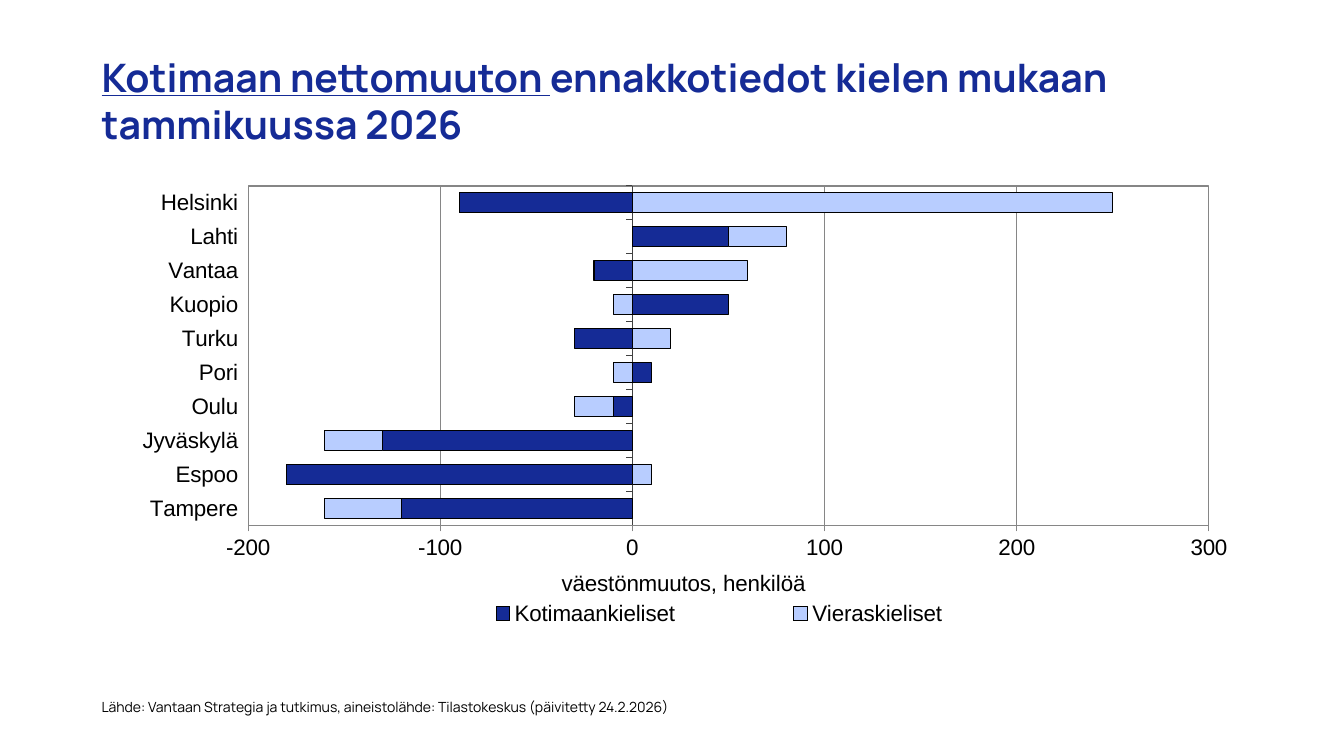
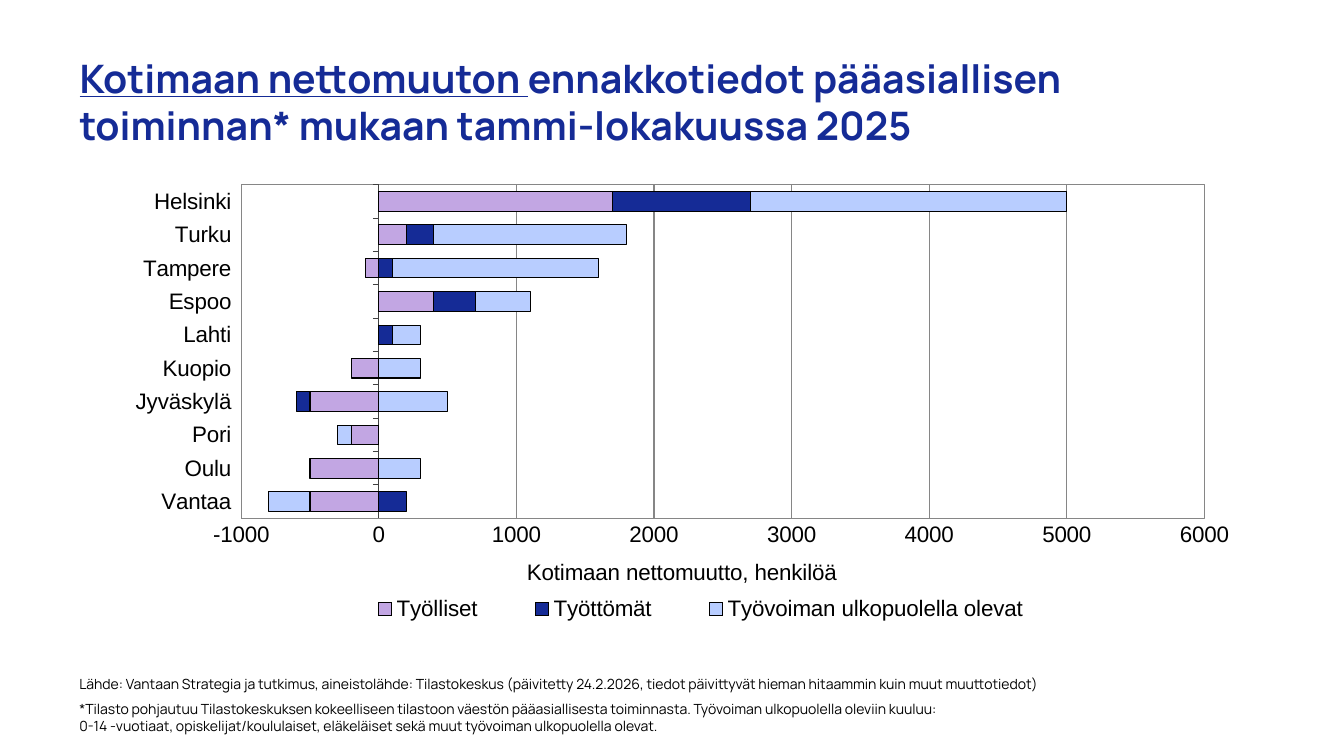
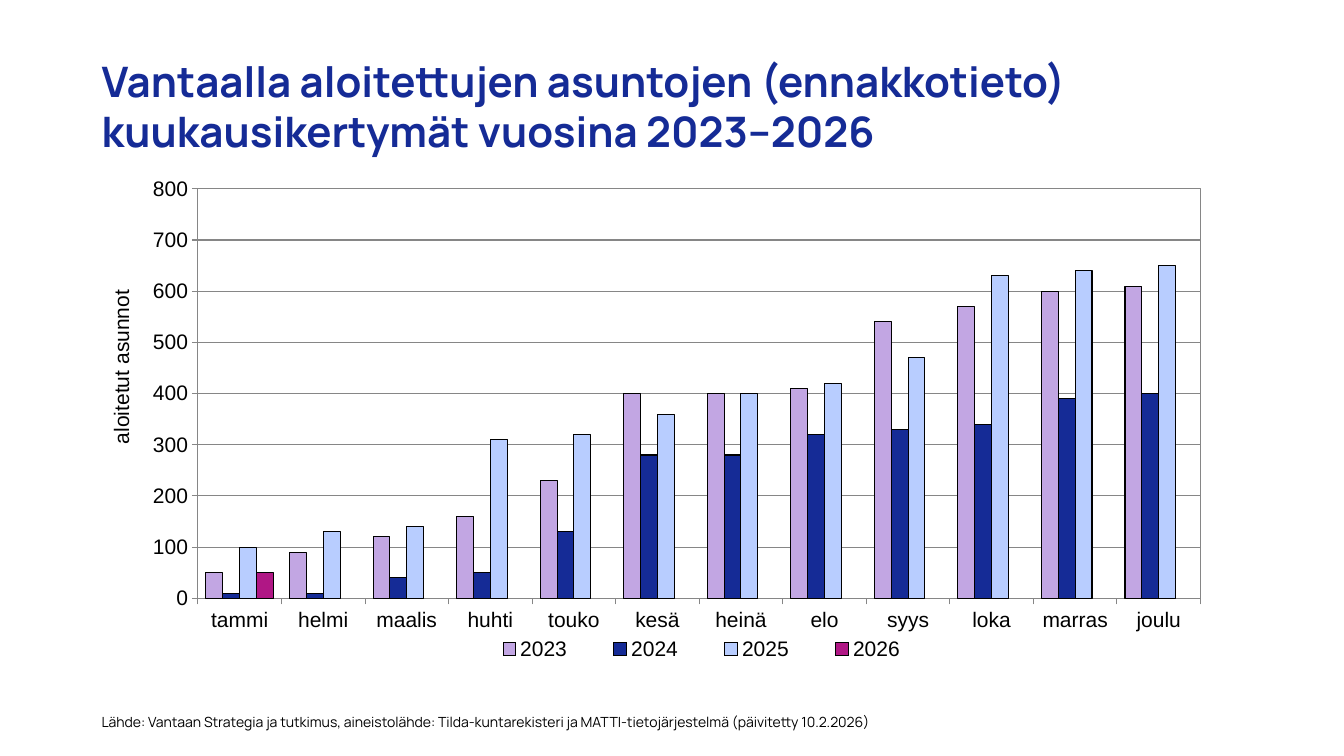
from dataclasses import dataclass
from typing import Any, Optional

from lxml.etree import SubElement
from pptx import Presentation
from pptx.chart.data import CategoryChartData
from pptx.dml.color import RGBColor
from pptx.enum.chart import XL_CHART_TYPE, XL_LEGEND_POSITION, XL_TICK_LABEL_POSITION, XL_TICK_MARK
from pptx.enum.text import MSO_ANCHOR, MSO_AUTO_SIZE, PP_ALIGN
from pptx.oxml import parse_xml
from pptx.oxml.ns import nsdecls, qn
from pptx.util import Cm, Pt

NAVY = RGBColor(0x15, 0x2B, 0x96)
SKY = RGBColor(0xB8, 0xCD, 0xFF)
LILAC = RGBColor(0xC2, 0xA6, 0xE3)
MAGENTA = RGBColor(0xB0, 0x17, 0x85)
BLACK = RGBColor(0, 0, 0)
DARK_GREY = RGBColor(0x40, 0x40, 0x40)
GRID_GREY = RGBColor(0x86, 0x86, 0x86)

HAIRLINE = Pt(0.75)
TITLE_FORMAT = {"name": "Manrope", "bold": True}
SOURCE_FORMAT = {"name": "Manrope", "size": Pt(10)}
CHART_FORMAT = {"name": "Arial", "bold": False}
SOURCE_START = "Lähde: Vantaan Strategia ja tutkimus, aineistolähde: "

Box = tuple[float, float, float, float]


@dataclass(frozen=True)
class Series:
    """One named data series and its fill."""

    name: str
    values: tuple[Optional[int], ...]
    color: RGBColor


@dataclass(frozen=True)
class ChartSpec:
    """Data, scale and layout fractions of one chart."""

    box: Box
    categories: tuple[str, ...]
    series: tuple[Series, ...]
    value_title: str
    scale: dict[str, int]
    gap: int
    plot_area: Box
    legend_area: Box
    title_at: tuple[float, float]
    stacked: bool = True
    value_tick: Any = XL_TICK_MARK.OUTSIDE
    axis_color: RGBColor = DARK_GREY
    size: int = 16


@dataclass(frozen=True)
class SlideSpec:
    """Title, source lines and chart of one slide."""

    title_box: Box
    title: str
    source_box: Box
    sources: tuple[tuple[str, int], ...]
    chart: ChartSpec
    underlined: str = ""
    title_size: int = 28


SLIDES = (
    SlideSpec(
        title_box=(2.31, 0.97, 28.5, 3.12),
        underlined="Kotimaan nettomuuton ",
        title="ennakkotiedot kielen mukaan tammikuussa 2026",
        source_box=(2.31, 17.48, 22.28, 0.76),
        sources=((SOURCE_START + "Tilastokeskus (päivitetty 24.2.2026)", 0),),
        chart=ChartSpec(
            box=(2.31, 4.34, 29.21, 11.58),
            categories=("Tampere", "Espoo", "Jyväskylä", "Oulu", "Pori",
                        "Turku", "Kuopio", "Vantaa", "Lahti", "Helsinki"),
            series=(
                Series("Kotimaankieliset", (-120, -180, -130, -10, 10, -30, 50, -20, 50, -90), NAVY),
                Series("Vieraskieliset", (-40, 10, -30, -20, -10, 20, -10, 60, 30, 250), SKY),
            ),
            value_title="väestönmuutos, henkilöä",
            scale={"minimum_scale": -200, "maximum_scale": 300, "major_unit": 100},
            gap=70,
            plot_area=(0.135, 0.03, 0.829, 0.739),
            legend_area=(0.253, 0.925, 0.577, 0.07),
            title_at=(0.402, 0.855),
        ),
    ),
    SlideSpec(
        title_box=(1.75, 0.97, 28.5, 3.18),
        underlined="Kotimaan nettomuuton ",
        title="ennakkotiedot pääasiallisen toiminnan* mukaan tammi-lokakuussa 2025",
        source_box=(1.75, 16.89, 27.41, 1.57),
        sources=(
            (SOURCE_START + "Tilastokeskus (päivitetty 24.2.2026, tiedot päivittyvät "
             "hieman hitaammin kuin muut muuttotiedot)", 0),
            ("*Tilasto pohjautuu Tilastokeskuksen kokeelliseen tilastoon väestön pääasiallisesta "
             "toiminnasta. Työvoiman ulkopuolella oleviin kuuluu:", 6),
            ("0-14 -vuotiaat, opiskelijat/koululaiset, eläkeläiset sekä muut "
             "työvoiman ulkopuolella olevat.", 0),
        ),
        chart=ChartSpec(
            box=(2.34, 4.32, 29.21, 11.58),
            categories=("Vantaa", "Oulu", "Pori", "Jyväskylä", "Kuopio",
                        "Lahti", "Espoo", "Tampere", "Turku", "Helsinki"),
            series=(
                Series("Työlliset", (-500, -500, -200, -500, -200, 0, 400, -100, 200, 1700), LILAC),
                Series("Työttömät", (200, 0, 0, -100, 0, 100, 300, 100, 200, 1000), NAVY),
                Series("Työvoiman ulkopuolella olevat",
                       (-300, 300, -100, 500, 300, 200, 400, 1500, 1400, 2300), SKY),
            ),
            value_title="Kotimaan nettomuutto, henkilöä",
            scale={"minimum_scale": -1000, "maximum_scale": 6000, "major_unit": 1000},
            gap=70,
            plot_area=(0.128, 0.029, 0.831, 0.726),
            legend_area=(0.203, 0.917, 0.643, 0.07),
            title_at=(0.371, 0.832),
            value_tick=XL_TICK_MARK.NONE,
        ),
    ),
    SlideSpec(
        title_box=(2.31, 1.02, 29.21, 3.3),
        title="Vantaalla aloitettujen asuntojen (ennakkotieto) kuukausikertymät vuosina 2023–2026",
        title_size=30,
        source_box=(2.31, 17.86, 23.27, 1.19),
        sources=((SOURCE_START + "Tilda-kuntarekisteri ja MATTI-tietojärjestelmä "
                  "(päivitetty 10.2.2026)", 0),),
        chart=ChartSpec(
            box=(2.59, 4.32, 28.55, 12.57),
            categories=("tammi", "helmi", "maalis", "huhti", "touko", "kesä",
                        "heinä", "elo", "syys", "loka", "marras", "joulu"),
            series=(
                Series("2023", (50, 90, 120, 160, 230, 400, 400, 410, 540, 570, 600, 610), LILAC),
                Series("2024", (10, 10, 40, 50, 130, 280, 280, 320, 330, 340, 390, 400), NAVY),
                Series("2025", (100, 130, 140, 310, 320, 360, 400, 420, 470, 630, 640, 650), SKY),
                Series("2026", (50,) + (None,) * 11, MAGENTA),
            ),
            value_title="aloitetut asunnot",
            scale={"minimum_scale": 0, "maximum_scale": 800, "major_unit": 100},
            gap=96,
            plot_area=(0.084, 0.035, 0.885, 0.821),
            legend_area=(0.318, 0.925, 0.421, 0.065),
            title_at=(0.001, 0.23),
            stacked=False,
            axis_color=GRID_GREY,
            size=15,
        ),
    ),
)


def to_cm(box: Box) -> list[Cm]:
    """Turn a box in centimetres into lengths."""
    return [Cm(length) for length in box]


def set_format(target: Any, values: dict[str, Any]) -> None:
    """Set each named attribute on the target."""
    for name, value in values.items():
        setattr(target, name, value)


def set_font(font: Any, values: dict[str, Any], color: RGBColor) -> None:
    """Apply format values and a colour to a font."""
    set_format(font, values)
    font.color.rgb = color


def set_line(line: Any, color: RGBColor) -> None:
    """Give a line the shared thin width and a colour."""
    line.color.rgb = color
    line.width = HAIRLINE


def set_layout(parent: Any, index: int, fractions: tuple[float, ...], inner: bool = False) -> None:
    """Place a chart part by fractions of the chart size."""
    for old in parent.findall(qn("c:layout")):
        parent.remove(old)
    layout = parse_xml(f"<c:layout {nsdecls('c')}><c:manualLayout/></c:layout>")
    manual = layout[0]
    if inner:
        SubElement(manual, qn("c:layoutTarget"), val="inner")
    for mode in ("xMode", "yMode"):
        SubElement(manual, qn(f"c:{mode}"), val="edge")
    for side, fraction in zip("xywh", fractions):
        SubElement(manual, qn(f"c:{side}"), val=str(fraction))
    parent.insert(index, layout)


def add_title(slide: Any, spec: SlideSpec) -> None:
    """Fill and place the title placeholder."""
    title = slide.shapes.title
    set_format(title, dict(zip(("left", "top", "width", "height"), to_cm(spec.title_box))))
    set_format(title.text_frame, {"vertical_anchor": MSO_ANCHOR.MIDDLE, "word_wrap": True,
                                  "auto_size": MSO_AUTO_SIZE.NONE})
    heading = title.text_frame.paragraphs[0]
    set_format(heading, {"alignment": PP_ALIGN.LEFT, "line_spacing": 1.0})
    for text, underline in ((spec.underlined, True), (spec.title, False)):
        if text:
            run = heading.add_run()
            run.text = text
            set_font(run.font, TITLE_FORMAT | {"size": Pt(spec.title_size), "underline": underline}, NAVY)


def add_sources(slide: Any, spec: SlideSpec) -> None:
    """Write the source lines at the foot of the slide."""
    frame = slide.shapes.add_textbox(*to_cm(spec.source_box)).text_frame
    frame.word_wrap = True
    for index, (text, space) in enumerate(spec.sources):
        source = frame.add_paragraph() if index else frame.paragraphs[0]
        if space:
            source.space_before = Pt(space)
        run = source.add_run()
        run.text = text
        set_font(run.font, SOURCE_FORMAT, BLACK)


def format_axes(chart: Any, spec: ChartSpec, text_format: dict[str, Any]) -> None:
    """Set scales, ticks, grid and value title."""
    months_or_cities, people = chart.category_axis, chart.value_axis
    set_format(months_or_cities, {"major_tick_mark": XL_TICK_MARK.OUTSIDE, "has_major_gridlines": False,
                                  "tick_label_position": XL_TICK_LABEL_POSITION.LOW})
    set_format(people, spec.scale | {"major_tick_mark": spec.value_tick, "has_major_gridlines": True})
    set_line(months_or_cities.format.line, spec.axis_color)
    set_line(people.format.line, GRID_GREY)
    set_line(people.major_gridlines.format.line, GRID_GREY)
    set_format(people.tick_labels, {"number_format": "0", "number_format_is_linked": False})

    value_title = people.axis_title
    run = value_title.text_frame.paragraphs[0].add_run()
    run.text = spec.value_title
    set_font(run.font, text_format, BLACK)
    title_xml = value_title._element
    for body in title_xml.iter(qn("a:bodyPr")):
        body.set("rot", "0" if spec.stacked else "-5400000")
        body.set("vert", "horz")
    set_layout(title_xml, 1, spec.title_at)


def add_bars(slide: Any, spec: ChartSpec) -> None:
    """Draw the bar or column chart."""
    data = CategoryChartData()
    data.categories = spec.categories
    for series in spec.series:
        data.add_series(series.name, series.values)
    kind = XL_CHART_TYPE.BAR_STACKED if spec.stacked else XL_CHART_TYPE.COLUMN_CLUSTERED
    chart = slide.shapes.add_chart(kind, *to_cm(spec.box), data).chart
    text_format = CHART_FORMAT | {"size": Pt(spec.size)}
    set_format(chart, {"has_title": False, "has_legend": True})
    set_font(chart.font, text_format, BLACK)
    set_format(chart.legend, {"position": XL_LEGEND_POSITION.BOTTOM, "include_in_layout": False})
    set_font(chart.legend.font, text_format, BLACK)
    set_layout(chart.legend._element, 1, spec.legend_area)

    bars = chart.plots[0]
    set_format(bars, {"gap_width": spec.gap, "overlap": 100 if spec.stacked else 0,
                      "vary_by_categories": False})
    for drawn, series in zip(bars.series, spec.series):
        drawn.invert_if_negative = False
        drawn.format.fill.solid()
        drawn.format.fill.fore_color.rgb = series.color
        set_line(drawn.format.line, BLACK)
    format_axes(chart, spec, text_format)

    plot_area = chart._chartSpace.find(f".//{qn('c:plotArea')}")
    set_layout(plot_area, 0, spec.plot_area, inner=True)
    plot_area.append(parse_xml(
        f'<c:spPr {nsdecls("c", "a")}><a:noFill/><a:ln w="{HAIRLINE}"><a:solidFill>'
        f'<a:srgbClr val="{GRID_GREY}"/></a:solidFill></a:ln></c:spPr>'))


def main() -> None:
    """Build and save the presentation."""
    deck = Presentation()
    set_format(deck, {"slide_width": Cm(33.87), "slide_height": Cm(19.05)})
    for spec in SLIDES:
        slide = deck.slides.add_slide(deck.slide_layouts[5])
        add_title(slide, spec)
        add_sources(slide, spec)
        add_bars(slide, spec.chart)
    deck.save("out.pptx")


if __name__ == "__main__":
    main()
